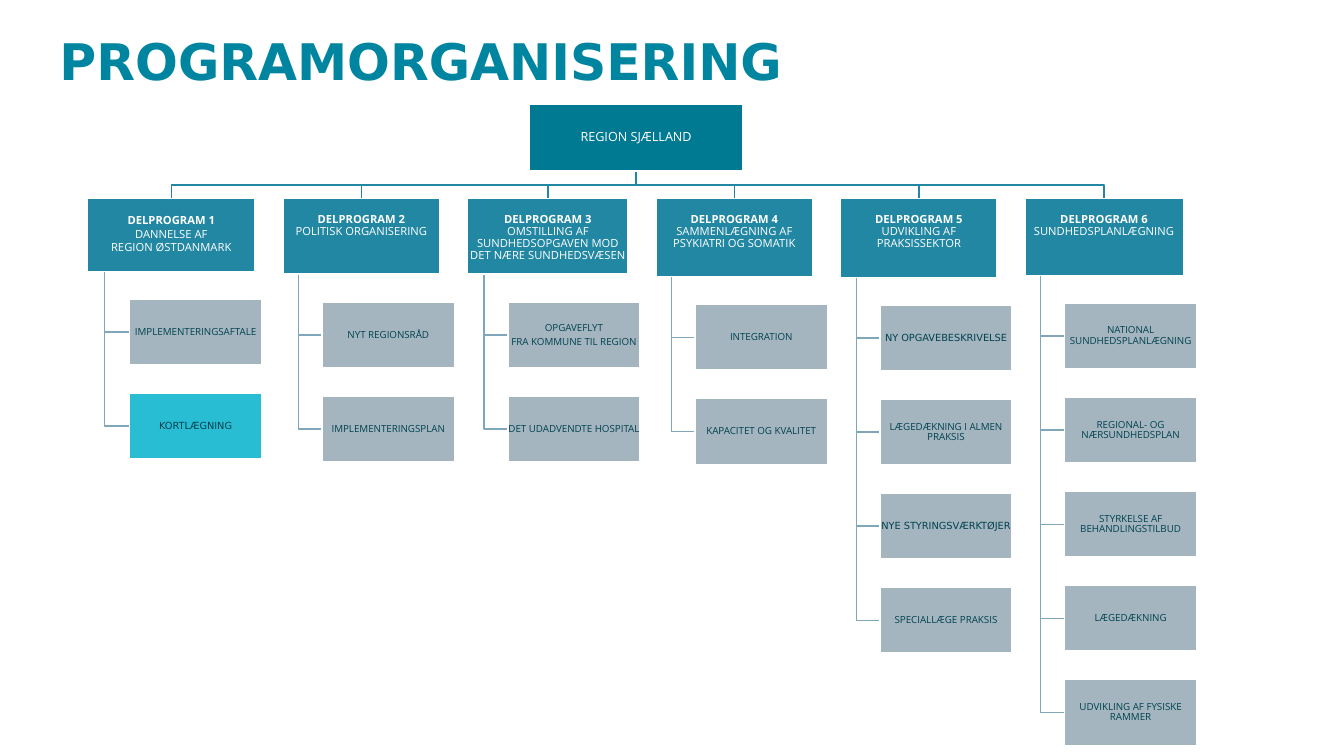
from itertools import product

from pptx import Presentation
from pptx.dml.color import RGBColor
from pptx.enum.shapes import MSO_SHAPE as Preset
from pptx.enum.text import MSO_ANCHOR as Anchor, PP_ALIGN as Align
from pptx.util import Cm, Pt

TITLE = "PROGRAMORGANISERING"
ROOT = "REGION SJÆLLAND"
HIGHLIGHTED = "KORTLÆGNING"
# (header width, header height in cm, header lines, tasks)
PROGRAMMES = [
    (4.22, 1.83, ["DELPROGRAM 1", "DANNELSE AF", "REGION ØSTDANMARK"],
     [["IMPLEMENTERINGSAFTALE"], [HIGHLIGHTED]]),
    (3.96, 1.9, ["DELPROGRAM 2", "POLITISK ORGANISERING"],
     [["NYT REGIONSRÅD"], ["IMPLEMENTERINGSPLAN"]]),
    (4.04, 1.9, ["DELPROGRAM 3",
                 "OMSTILLING AF SUNDHEDSOPGAVEN MOD DET NÆRE SUNDHEDSVÆSEN"],
     [["OPGAVEFLYT", "FRA KOMMUNE TIL REGION"], ["DET UDADVENDTE HOSPITAL"]]),
    (3.96, 1.96, ["DELPROGRAM 4", "SAMMENLÆGNING AF", "PSYKIATRI OG SOMATIK"],
     [["INTEGRATION"], ["KAPACITET OG KVALITET"]]),
    (3.94, 1.98, ["DELPROGRAM 5", "UDVIKLING AF PRAKSISSEKTOR"],
     [["NY OPGAVEBESKRIVELSE"], ["LÆGEDÆKNING I ALMEN PRAKSIS"],
      ["NYE STYRINGSVÆRKTØJER"], ["SPECIALLÆGE PRAKSIS"]]),
    (3.99, 1.93, ["DELPROGRAM 6", "SUNDHEDSPLANLÆGNING"],
     [["NATIONAL SUNDHEDSPLANLÆGNING"], ["REGIONAL- OG NÆRSUNDHEDSPLAN"],
      ["STYRKELSE AF BEHANDLINGSTILBUD"], ["LÆGEDÆKNING"],
      ["UDVIKLING AF FYSISKE RAMMER"]]),
]
WIDE_FONT_TASKS = {HIGHLIGHTED, "NY OPGAVEBESKRIVELSE", "NYE STYRINGSVÆRKTØJER"}

COLORS = {
    "title": "0085A1", "root": "007992", "header": "2287A2", "task": "A4B5BF",
    "highlight": "29BDD4", "task_text": "004250", "task_line": "7FA7B9",
    "white": "FFFFFF",
}
BODY_FONT, WIDE_FONT = "Open Sans", "DejaVu Sans"

# Lengths in cm
GAP = 0.7
ROOT_LEFT, ROOT_TOP, ROOT_WIDTH, ROOT_HEIGHT = 13.34, 2.64, 5.38, 1.67
FIRST_LEFT = 2.21
TASK_WIDTH, TASK_HEIGHT, TASK_PITCH = 3.33, 1.66, 2.37
TRUNK_SHARE, TASK_SHARE = 0.1, 0.25
HEADER_INSET = 0.37

prs = Presentation()
prs.slide_width, prs.slide_height = Cm(33.87), Cm(19.05)
slide = prs.slides.add_slide(prs.slide_layouts[6])


def rgb(name):
    return RGBColor.from_string(COLORS[name])


def write(shape, lines, size, color, font=BODY_FONT, align=Align.CENTER,
          anchor=Anchor.MIDDLE, inset_top=0, spacing=0.9, after=0, bold_first=False):
    frame = shape.text_frame
    frame.word_wrap = True
    frame.vertical_anchor = anchor
    frame.margin_left = frame.margin_right = frame.margin_bottom = 0
    frame.margin_top = Cm(inset_top)
    frame.text = "\n".join(lines)
    for index, paragraph in enumerate(frame.paragraphs):
        paragraph.alignment = align
        paragraph.line_spacing = spacing
        paragraph.space_after = Pt(after)
        for run in paragraph.runs:
            run.font.name = font
            run.font.size = Pt(size)
            run.font.bold = bold_first and index == 0
            run.font.color.rgb = rgb(color)


def add_box(left, top, width, height, fill):
    box = slide.shapes.add_shape(
        Preset.RECTANGLE, Cm(left), Cm(top), Cm(width), Cm(height))
    box.shadow.inherit = False
    box.fill.solid()
    box.fill.fore_color.rgb = rgb(fill)
    box.line.color.rgb = rgb("white")
    box.line.width = Pt(1)
    return box


def add_elbow(points, color):
    """Draw an open line through points given in cm."""
    start, *rest = [(Cm(x), Cm(y)) for x, y in points]
    builder = slide.shapes.build_freeform(*start)
    builder.add_line_segments(rest, close=False)
    elbow = builder.convert_to_shape()
    elbow.shadow.inherit = False
    elbow.fill.background()
    elbow.line.color.rgb = rgb(color)
    elbow.line.width = Pt(1)


def add_programme(left, width, height, lines, tasks):
    center, trunk = left + width / 2, left + TRUNK_SHARE * width
    task_left, header_bottom = left + TASK_SHARE * width, header_top + height
    add_elbow([(root_center, root_bottom), (root_center, root_bottom + GAP / 2),
               (center, root_bottom + GAP / 2), (center, header_top)], "header")
    task_tops = [header_bottom + GAP + row * TASK_PITCH for row in range(len(tasks))]
    for top in task_tops:
        middle = top + TASK_HEIGHT / 2
        add_elbow([(trunk, header_bottom), (trunk, middle), (task_left, middle)],
                  "task_line")

    header = add_box(left, header_top, width, height, "header")
    write(header, lines, 8, "white", anchor=Anchor.TOP, inset_top=HEADER_INSET,
          spacing=1.0 if left == FIRST_LEFT else 0.9, bold_first=True)
    for top, task in zip(task_tops, tasks):
        fill = "highlight" if task[0] == HIGHLIGHTED else "task"
        font = WIDE_FONT if task[0] in WIDE_FONT_TASKS else BODY_FONT
        box = add_box(task_left, top, TASK_WIDTH, TASK_HEIGHT, fill)
        write(box, task, 7, "task_text", font=font, after=2.45)


title = slide.shapes.add_textbox(Cm(1.5), Cm(0), Cm(26.8), Cm(2.31))
write(title, [TITLE], 36, "title", font=WIDE_FONT, align=Align.LEFT,
      anchor=Anchor.BOTTOM, bold_first=True)

root_center, root_bottom = ROOT_LEFT + ROOT_WIDTH / 2, ROOT_TOP + ROOT_HEIGHT
header_top = root_bottom + GAP
programme_left = FIRST_LEFT
for width, height, lines, tasks in PROGRAMMES:
    add_programme(programme_left, width, height, lines, tasks)
    programme_left += width + GAP

root = add_box(ROOT_LEFT, ROOT_TOP, ROOT_WIDTH, ROOT_HEIGHT, "root")
write(root, [ROOT], 9, "white")

prs.save("out.pptx")
